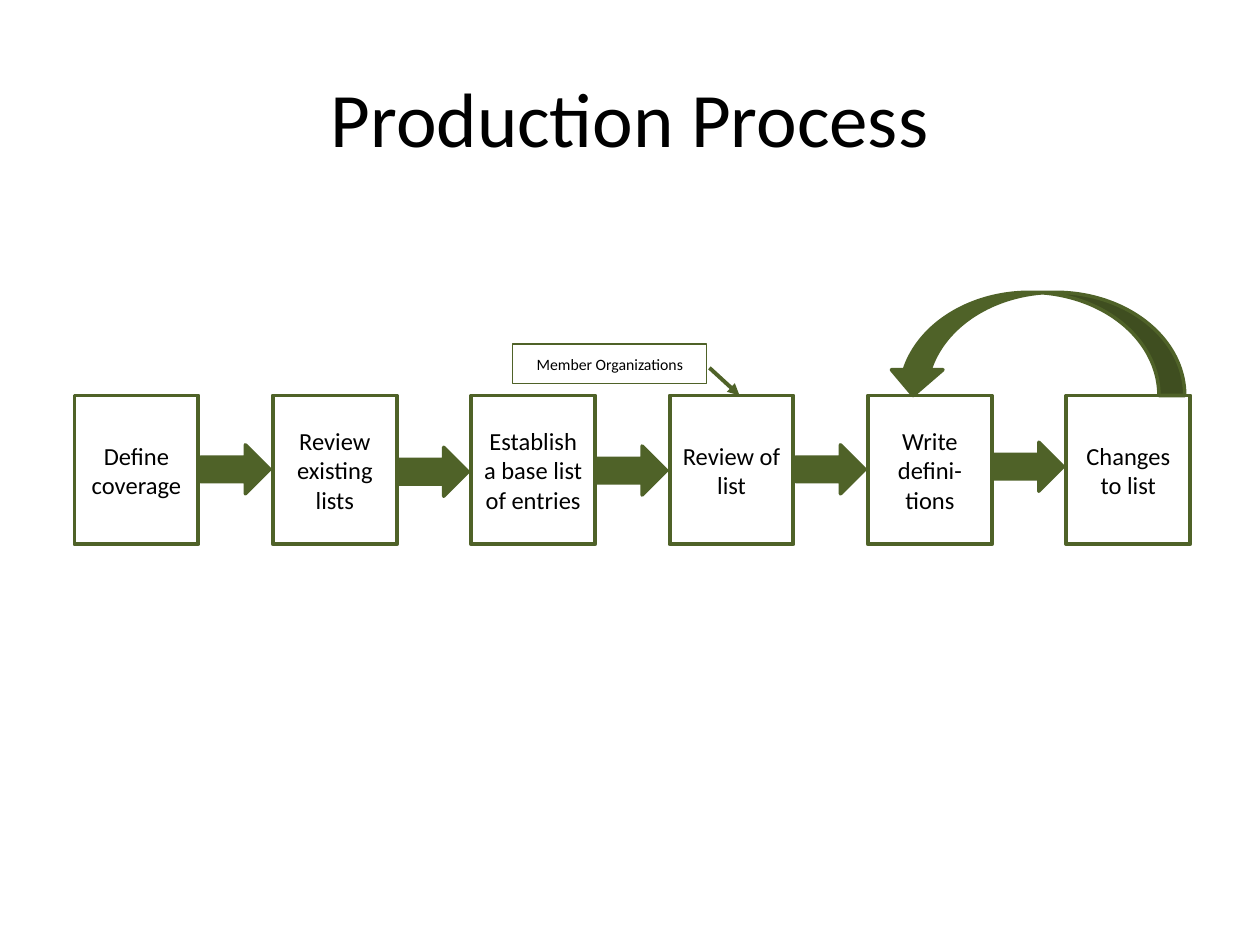
from lxml import etree
from pptx import Presentation
from pptx.dml.color import RGBColor
from pptx.enum import shapes, text
from pptx.oxml import ns
from pptx.util import Pt

GREEN = RGBColor(0x4F, 0x62, 0x28)
WHITE = RGBColor(0xFF, 0xFF, 0xFF)
BLACK = RGBColor(0, 0, 0)


class ProcessSlide:
    """Style and drawing methods for one slide; lengths are in points."""

    font = "Calibri"

    def __init__(self, slide):
        self.slide = slide

    def label(self, shape, words, size):
        frame = shape.text_frame
        frame.word_wrap = True
        frame.vertical_anchor = text.MSO_ANCHOR.MIDDLE
        frame.text = words
        paragraph = frame.paragraphs[0]
        paragraph.alignment = text.PP_ALIGN.CENTER
        font = paragraph.runs[0].font
        font.name, font.size, font.color.rgb = self.font, Pt(size), BLACK

    def title(self, words, left, top, width, height):
        box = self.slide.shapes.add_textbox(Pt(left), Pt(top), Pt(width), Pt(height))
        self.label(box, words, 44)

    def shape(self, kind, left, top, width, height, fill, weight):
        item = self.slide.shapes.add_shape(kind, Pt(left), Pt(top), Pt(width), Pt(height))
        item.shadow.inherit = False
        if fill is None:
            item.fill.background()
        else:
            item.fill.solid()
            item.fill.fore_color.rgb = fill
        item.line.color.rgb = GREEN
        item.line.width = Pt(weight)
        return item

    def box(self, words, left, top, width, height, fill=WHITE, weight=2.25, size=14):
        rectangle = self.shape(shapes.MSO_SHAPE.RECTANGLE, left, top, width, height,
                               fill, weight)
        self.label(rectangle, words, size)

    def block_arrow(self, kind, left, top, width, height, rotation=0):
        arrow = self.shape(kind, left, top, width, height, GREEN, 2)
        arrow.rotation = rotation

    def pointer(self, x1, y1, x2, y2):
        connector = self.slide.shapes.add_connector(
            shapes.MSO_CONNECTOR.STRAIGHT, Pt(x1), Pt(y1), Pt(x2), Pt(y2))
        connector.line.color.rgb = GREEN
        connector.line.width = Pt(2.25)
        properties = connector._element.spPr
        outline = properties.find(ns.qn("a:ln"))
        etree.SubElement(outline, ns.qn("a:tailEnd"), type="triangle")
        etree.SubElement(properties, ns.qn("a:effectLst"))


def main():
    deck = Presentation()
    deck.slide_width, deck.slide_height = Pt(720), Pt(540)
    page = ProcessSlide(deck.slides.add_slide(deck.slide_layouts[6]))

    page.title("Production Process", 36, 21.6, 648, 90)

    # Process steps
    steps = ["Define coverage", "Review existing lists", "Establish a base list of entries",
             "Review of list", "Write defini-tions", "Changes to list"]
    step_left, step_top, step_width, step_height, pitch = 42.6, 226, 70.8, 85, 113.35
    for i, step in enumerate(steps):
        page.box(step, step_left + i * pitch, step_top, step_width, step_height)

    # Reviewers of the list
    page.box("Member Organizations", 293, 196.6, 110.9, 22.5, fill=None, weight=0.75, size=9)
    page.pointer(405.4, 210.2, 422.6, step_top)

    # Arrows from step to step
    for i, arrow_top in enumerate([254.2, 255.6, 254.9, 254.2, 252.7]):
        page.block_arrow(shapes.MSO_SHAPE.RIGHT_ARROW,
                         step_left + step_width + 1.2 + i * pitch, arrow_top, 39.6, 28)

    # Loop from list changes back to writing
    page.block_arrow(shapes.MSO_SHAPE.CURVED_UP_ARROW, 507, 167, 170, 59, rotation=180)

    deck.save("out.pptx")


if __name__ == "__main__":
    main()
